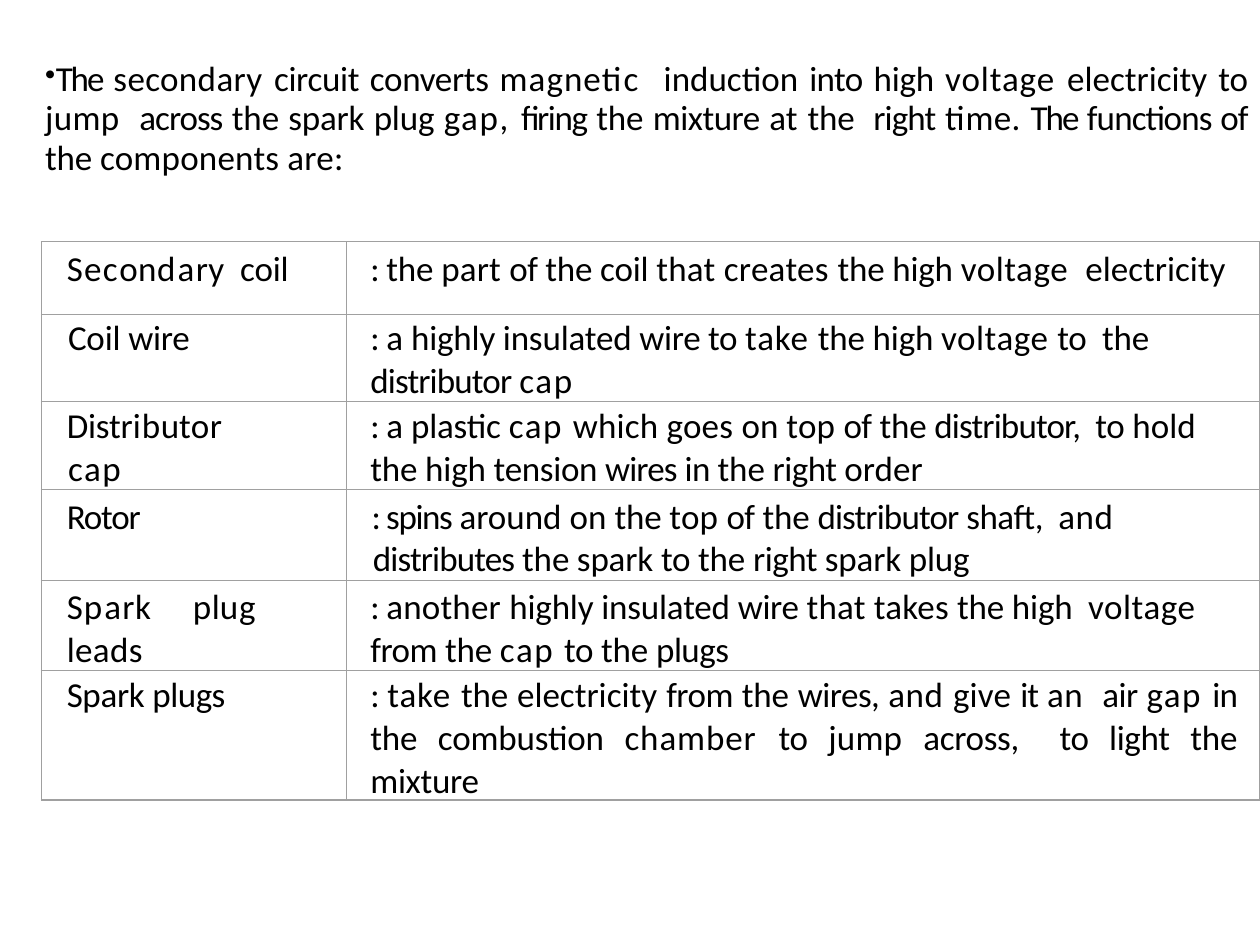
from dataclasses import dataclass

from lxml import etree
from pptx import Presentation
from pptx import util as u
from pptx.dml.color import RGBColor
from pptx.enum import text
from pptx.oxml import ns


@dataclass(frozen=True)
class Theme:
    font: str = "Calibri"
    size: float = 20
    ink: str = "000000"
    rule: str = "A0A0A0"
    hairline: float = 0.25
    frame: float = 0.75
    side: float = 1


INTRO = (
    "{-1.2}The {0.2}secondary {-0.2}circuit converts {0.6}magnetic  {0}induction {-0.4}into "
    "{-0.1}high {0.5}voltage {0}electricity {-0.2}to {0.2}jump  {-0.6}across "
    "{-0.1}the spark plug {0.9}gap, {-0.8}firing {-0.1}the {-0.3}mixture {0.1}at {-0.1}the  "
    "{-0.5}right {0.2}time. {-1.2}The {-0.5}functions of {-0.1}the {0.1}components are:"
)

COMPONENTS = [
    ("{0.7}Se{0.9}c{0.2}o{0.4}n{1.2}d{0.8}a{0.2}r{0}y  {-0.1}coil",
     "{-0.8}: {-0.1}the {0.1}part {-0.3}of {-0.1}the coil {0.1}that {0.2}creates "
     "{-0.1}the high {0.3}voltage  {0}electricity"),
    ("{-0.1}Coil {-0.2}wire",
     "{-0.8}: {0}a {-0.1}highly insulated {-0.2}wire to {0.5}take {-0.1}the high "
     "{0.3}voltage {-0.2}to  {-0.1}the {-0.5}distributor {0.9}cap"),
    ("{-0.1}Distr{0.5}i{0.3}b{-0.1}u{0.2}to{0}r {0.9}cap",
     "{-0.8}: {0}a {-0.1}plastic {0.9}cap {0.1}which goes {0}on {0.1}top {-0.3}of {-0.1}the "
     "{-0.5}distributor,  {-0.2}to {0}hold {-0.1}the high {-0.2}tension {-0.5}wires "
     "{-0.4}in {-0.1}the {-0.3}right {0}order"),
    ("{-0.7}Rotor",
     "{-0.8}: spins {0}around on {-0.1}the {0.1}top {-0.3}of {-0.1}the {-0.5}distributor "
     "{-0.3}shaft,  {0.3}and {-0.5}distributes {-0.1}the spark {-0.2}to {-0.1}the "
     "{-0.3}right {-0.1}spark plug"),
    ("{0.5}S{1.2}p{0.8}a{0.2}r{0}k\t{0.4}p{0}l{0.4}u{0}g  {0.2}leads",
     "{-0.8}: {0.1}another {-0.1}highly insulated {-0.2}wire {0.1}that takes "
     "{-0.1}the high  {0.3}voltage {-0.3}from {-0.1}the {0.9}cap {-0.2}to {-0.1}the {-0.3}plugs"),
    ("{-0.2}Spark {-0.3}plugs",
     "{-0.8}: {0.5}take {-0.1}the {0}electricity {-0.3}from {-0.1}the {-0.3}wires, {0.3}and "
     "{0.1}give {-0.6}it {0.3}an  {-0.3}air {0.8}gap {-0.4}in {-0.1}the combustion "
     "{0.5}chamber {-0.2}to {0.1}jump {-0.2}across,  to light {-0.1}the {-0.2}mixture"),
]
ROW_HEIGHTS = [0.57, 0.55, 0.69, 0.71, 0.56, 0.84]
TOP_MARGINS = [0.05, 0.03, 0.03, 0.05, 0.05, 0.03]
SPACE_BEFORE = [3.6, 2.3, 2.2, 3.4, 3.4, 2.2]
INDENTS = [
    ((0.21, -0.01), (0.2, -0.01)),
    ((0.21, 0), (0.19, 0)),
    ((0.21, -0.01), (0.19, 0)),
    ((0.2, 0), (0.21, -0.01)),
    ((0.2, 0), (0.19, 0)),
    ((0.2, 0), (0.19, 0)),
]
RIGHT_INDENTS = {(2, 0): 0.8, (2, 1): 0.2, (5, 1): 0.18}


class SlideWriter:
    def __init__(self, slide, theme):
        self.slide = slide
        self.theme = theme

    def paragraph(self, paragraph, tracked, indent, before, right=0, justify=False, tab=None, bullet=None):
        paragraph.space_before = u.Pt(before)
        if justify:
            paragraph.alignment = text.PP_ALIGN.JUSTIFY
        paragraph.font.name = self.theme.font
        paragraph.font.size = u.Pt(self.theme.size)
        paragraph.font.color.rgb = RGBColor.from_string(self.theme.ink)
        for piece in tracked.split("{")[1:]:
            tracking, words = piece.split("}")
            run = paragraph.add_run()
            run.text = words
            run._r.get_or_add_rPr().set("spc", str(round(float(tracking) * 100)))
        props = paragraph._p.get_or_add_pPr()
        for name, length in zip(("marL", "indent", "marR"), (*indent, right)):
            props.set(name, str(u.Inches(length)))
        extras = []
        if bullet:
            char, percent = bullet
            extras += [("a:buSzPct", {"val": str(percent * 1000)}), ("a:buChar", {"char": char})]
        if tab:
            extras.append(("a:tabLst", {}))
        defaults = props.find(ns.qn("a:defRPr"))
        for tag, attributes in extras:
            defaults.addprevious(etree.Element(ns.qn(tag), attributes))
        if tab:
            etree.SubElement(props.find(ns.qn("a:tabLst")), ns.qn("a:tab"),
                             {"pos": str(u.Inches(tab)), "algn": "l"})

    def intro(self, left, top, width, height, tracked):
        frame = self.slide.shapes.add_textbox(*map(u.Inches, (left, top, width, height))).text_frame
        frame.word_wrap = True
        self.paragraph(frame.paragraphs[0], tracked, (0.01, 0), 2.4,
                       justify=True, tab=0.33, bullet=("•", 86))
        frame.paragraphs[0].line_spacing = 0.95

    def borders(self, cell, **widths):
        props = cell._tc.get_or_add_tcPr()
        for position, side in enumerate("LRTB"):
            line = etree.Element(ns.qn(f"a:ln{side}"), {"w": str(u.Pt(widths[side]))})
            fill = etree.SubElement(line, ns.qn("a:solidFill"))
            etree.SubElement(fill, ns.qn("a:srgbClr"), {"val": self.theme.rule})
            props.insert(position, line)

    def component_table(self, left, top, widths, heights, rows):
        table = self.slide.shapes.add_table(
            len(rows), len(widths), *map(u.Inches, (left, top, sum(widths), sum(heights)))).table
        table.first_row = table.horz_banding = False
        for column, width in zip(table.columns, widths):
            column.width = u.Inches(width)
        last_row, last_column = len(rows) - 1, len(widths) - 1
        thin, frame, side = self.theme.hairline, self.theme.frame, self.theme.side
        for r, entry in enumerate(rows):
            table.rows[r].height = u.Inches(heights[r])
            for c, tracked in enumerate(entry):
                cell = table.cell(r, c)
                cell.fill.background()
                cell.margin_left = cell.margin_right = cell.margin_bottom = 0
                cell.margin_top = u.Inches(TOP_MARGINS[r])
                self.paragraph(cell.text_frame.paragraphs[0], tracked, INDENTS[r][c], SPACE_BEFORE[r],
                               right=RIGHT_INDENTS.get((r, c), 0), justify=(r, c) == (last_row, last_column),
                               tab=1.15 if "\t" in tracked else None)
                self.borders(cell, L=side if c == 0 else thin, R=side if c == last_column else thin,
                             T=frame if r == 0 else thin, B=frame if r == last_row else thin)


def main():
    deck = Presentation()
    deck.slide_width, deck.slide_height = u.Inches(10), u.Inches(7.5)
    writer = SlideWriter(deck.slides.add_slide(deck.slide_layouts[6]), Theme())
    writer.intro(0.25, 0.42, 9.75, 1.06, INTRO)
    writer.component_table(0.33, 1.92, [2.42, 7.25], ROW_HEIGHTS, COMPONENTS)
    deck.save("out.pptx")


if __name__ == "__main__":
    main()
